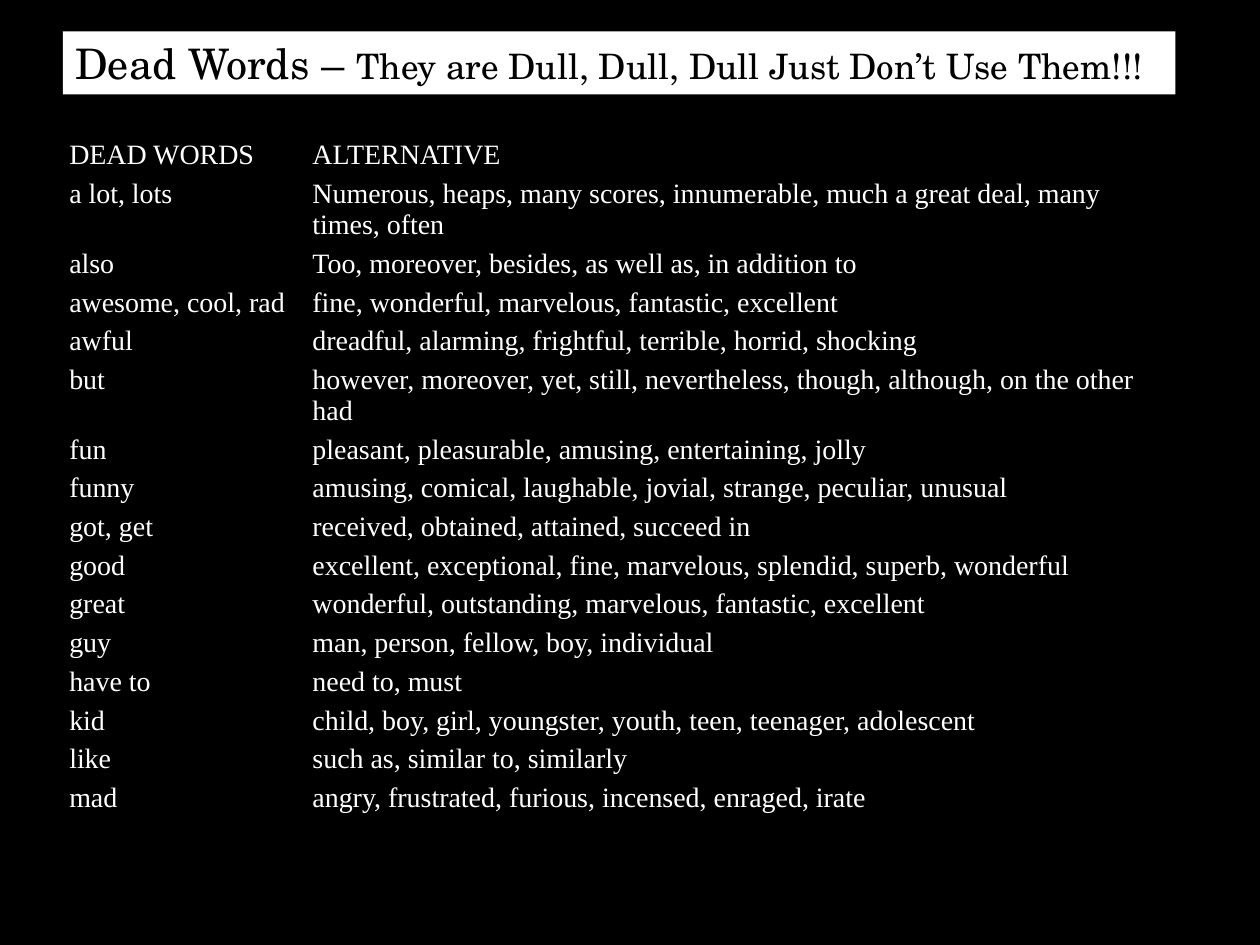
from lxml.etree import SubElement
from pptx import Presentation
from pptx.dml.color import RGBColor
from pptx.enum.shapes import MSO_SHAPE
from pptx.enum.text import MSO_ANCHOR, PP_ALIGN
from pptx.oxml.ns import qn
from pptx.util import Inches, Pt


def paint(fill, color):
    fill.solid()
    fill.fore_color.rgb = RGBColor.from_string(color)


def border(cell, color):
    props = cell._tc.get_or_add_tcPr()
    for side in ("lnL", "lnR", "lnT", "lnB"):
        line = SubElement(props, qn(f"a:{side}"), w=str(Pt(1)))
        solid = SubElement(line, qn("a:solidFill"))
        SubElement(solid, qn("a:srgbClr"), val=color)


words = [
    ("", ""),
    ("DEAD WORDS", "ALTERNATIVE"),
    ("a lot, lots", "Numerous, heaps, many scores, innumerable, much a great deal, many times, often"),
    ("also", "Too, moreover, besides, as well as, in addition to"),
    ("awesome, cool, rad", "fine, wonderful, marvelous, fantastic, excellent"),
    ("awful", "dreadful, alarming, frightful, terrible, horrid, shocking"),
    ("but", "however, moreover, yet, still, nevertheless, though, although, on the other had"),
    ("fun", "pleasant, pleasurable, amusing, entertaining, jolly"),
    ("funny", "amusing, comical, laughable, jovial, strange, peculiar, unusual"),
    ("got, get", "received, obtained, attained, succeed in"),
    ("good", "excellent, exceptional, fine, marvelous, splendid, superb, wonderful"),
    ("great", "wonderful, outstanding, marvelous, fantastic, excellent"),
    ("guy", "man, person, fellow, boy, individual"),
    ("have to", "need to, must"),
    ("kid", "child, boy, girl, youngster, youth, teen, teenager, adolescent"),
    ("like", "such as, similar to, similarly"),
    ("mad", "angry, frustrated, furious, incensed, enraged, irate"),
]

deck = Presentation()
deck.slide_width = Inches(10)
deck.slide_height = Inches(7.5)
slide = deck.slides.add_slide(deck.slide_layouts[6])
paint(slide.background.fill, "000000")

table = slide.shapes.add_table(
    len(words), 2, Inches(0.5), Inches(0.33), Inches(8.84), Inches(6.14)
).table
table.first_row = False
table.horz_banding = False
table.columns[0].width = Inches(1.93)
table.columns[1].width = Inches(6.91)

for r, pair in enumerate(words):
    tall = len(pair[1]) > 70
    table.rows[r].height = Inches(0.75 if r == 0 else 0.55 if tall else 0.3)
    for c, text in enumerate(pair):
        cell = table.cell(r, c)
        border(cell, "000000")
        cell.fill.background()
        cell.margin_left = cell.margin_right = Inches(0.05)
        cell.margin_top = cell.margin_bottom = Inches(0.03)
        cell.text = text
        font = cell.text_frame.paragraphs[0].font
        font.name = "Times New Roman"
        font.size = Pt(16)
        paint(font.fill, "FFFFFF")

title = slide.shapes.add_shape(
    MSO_SHAPE.RECTANGLE, Inches(0.5), Inches(0.25), Inches(8.83), Inches(0.5)
)
title.shadow.inherit = False
paint(title.fill, "FFFFFF")
title.line.fill.background()
frame = title.text_frame
frame.word_wrap = True
frame.vertical_anchor = MSO_ANCHOR.TOP
head = frame.paragraphs[0]
head.alignment = PP_ALIGN.LEFT
for text, size in (
    ("Dead Words – ", 24),
    ("They are Dull, Dull, Dull Just Don’t Use Them!!!", 20),
):
    run = head.add_run()
    run.text = text
    run.font.name = "TeX Gyre Schola"
    run.font.size = Pt(size)
    paint(run.font.fill, "000000")

deck.save("out.pptx")
